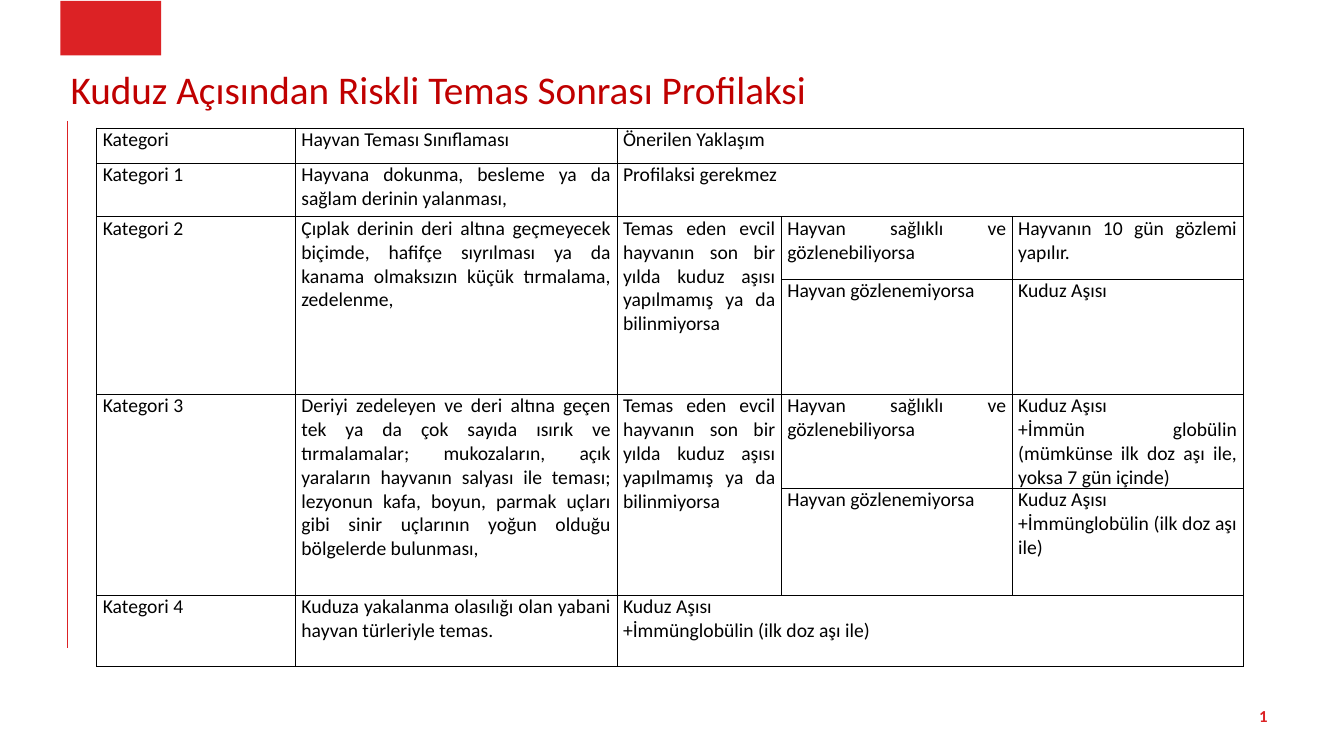
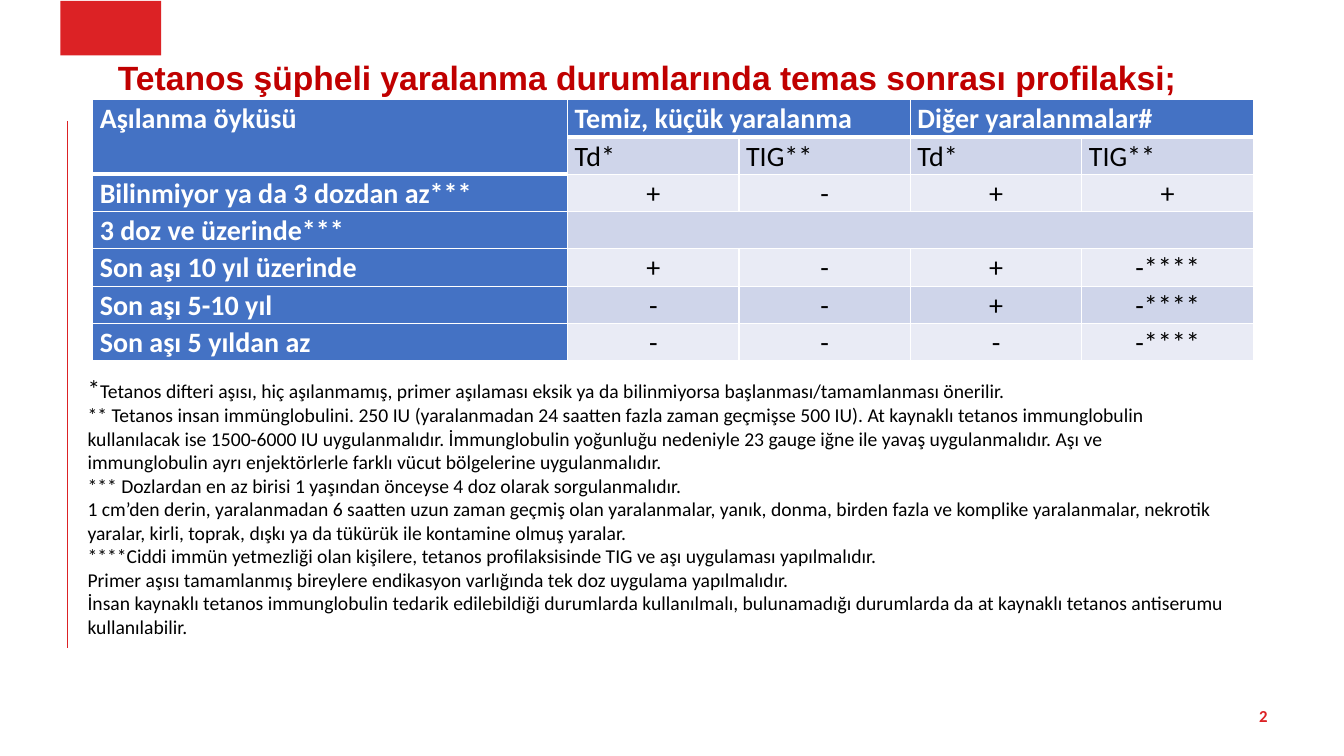
from lxml.etree import SubElement
from pptx import Presentation
from pptx.dml.color import RGBColor
from pptx.enum.shapes import MSO_CONNECTOR, MSO_SHAPE
from pptx.enum.text import MSO_ANCHOR, MSO_AUTO_SIZE, PP_ALIGN
from pptx.oxml.ns import qn
from pptx.util import Inches, Pt

RED, DEEP, BLACK, WHITE = "DC2225", "C00000", "000000", "FFFFFF"
BLUE, DARK, PALE = "4472C4", "CFD5EA", "E9EBF5"
BASE = {"name": "Calibri", "size": Pt(14), "bold": False}

PET = "Temas eden evcil hayvanın son bir yılda kuduz aşısı yapılmamış ya da bilinmiyorsa"
SEEN = "Hayvan sağlıklı ve gözlenebiliyorsa"
LOST = "Hayvan gözlenemiyorsa"
SHOT = "Kuduz Aşısı"
BOTH = SHOT + "\n+İmmünglobülin (ilk doz aşı ile)"

RABIES = [
    ["Kategori", "Hayvan Teması Sınıflaması", "Önerilen Yaklaşım", "", ""],
    ["Kategori 1", "Hayvana dokunma, besleme ya da sağlam derinin yalanması,",
     "Profilaksi gerekmez", "", ""],
    ["Kategori 2",
     "Çıplak derinin deri altına geçmeyecek biçimde, hafifçe sıyrılması ya da "
     "kanama olmaksızın küçük tırmalama, zedelenme,",
     PET, SEEN, "Hayvanın 10 gün gözlemi yapılır."],
    ["", "", "", LOST, SHOT],
    ["Kategori 3",
     "Deriyi zedeleyen ve deri altına geçen tek ya da çok sayıda ısırık ve tırmalamalar; "
     "mukozaların, açık yaraların hayvanın salyası ile teması; lezyonun kafa, boyun, "
     "parmak uçları gibi sinir uçlarının yoğun olduğu bölgelerde bulunması,",
     PET, SEEN,
     SHOT + "\n+İmmün globülin (mümkünse ilk doz aşı ile, yoksa 7 gün içinde)"],
    ["", "", "", LOST, BOTH],
    ["Kategori 4", "Kuduza yakalanma olasılığı olan yabani hayvan türleriyle temas.",
     BOTH, "", ""],
]
TETANUS = [
    ["Aşılanma öyküsü", "Temiz, küçük yaralanma", "", "Diğer yaralanmalar#", ""],
    ["", "Td*", "TIG**", "Td*", "TIG**"],
    ["Bilinmiyor ya da 3 dozdan az***", "+", "-", "+", "+"],
    ["3 doz ve üzerinde***", "", "", "", ""],
    ["Son aşı 10 yıl üzerinde", "+", "-", "+", "-****"],
    ["Son aşı 5-10 yıl", "-", "-", "+", "-****"],
    ["Son aşı 5 yıldan az", "-", "-", "-", "-****"],
]
STAR = ("Tetanos difteri aşısı, hiç aşılanmamış, primer aşılaması eksik ya da "
        "bilinmiyorsa başlanması/tamamlanması önerilir.")
NOTES = [
    "** Tetanos insan immünglobulini. 250 IU (yaralanmadan 24 saatten fazla zaman geçmişse "
    "500 IU). At kaynaklı tetanos immunglobulin kullanılacak ise 1500-6000 IU uygulanmalıdır. "
    "İmmunglobulin yoğunluğu nedeniyle 23 gauge iğne ile yavaş uygulanmalıdır. Aşı ve "
    "immunglobulin ayrı enjektörlerle farklı vücut bölgelerine uygulanmalıdır.",
    "*** Dozlardan en az birisi 1 yaşından önceyse 4 doz olarak sorgulanmalıdır.",
    "1 cm’den derin, yaralanmadan 6 saatten uzun zaman geçmiş olan yaralanmalar, yanık, donma, "
    "birden fazla ve komplike yaralanmalar, nekrotik yaralar, kirli, toprak, dışkı ya da tükürük "
    "ile kontamine olmuş yaralar.",
    "****Ciddi immün yetmezliği olan kişilere, tetanos profilaksisinde TIG ve aşı uygulaması "
    "yapılmalıdır.",
    "Primer aşısı tamamlanmış bireylere endikasyon varlığında tek doz uygulama yapılmalıdır.",
    "İnsan kaynaklı tetanos immunglobulin tedarik edilebildiği durumlarda kullanılmalı, "
    "bulunamadığı durumlarda da at kaynaklı tetanos antiserumu kullanılabilir.",
]


def tint(form, color):
    """Give a fill, line or font colour format a hex colour."""
    form.rgb = RGBColor.from_string(color)


def put(item, values):
    """Set attributes from a dict of format values."""
    for key, value in values.items():
        setattr(item, key, value)


def say(para, text, color=BLACK, **look):
    """Add a formatted run to a paragraph."""
    run = para.add_run()
    run.text = text
    put(run.font, BASE | look)
    tint(run.font.color, color)
    return run


def place(shape, *box):
    """Move and size a shape, in inches."""
    put(shape, dict(zip(("left", "top", "width", "height"), map(Inches, box))))


def frame(slide, page):
    """Draw the red tab, the side line and the page number."""
    tab = slide.shapes.add_shape(MSO_SHAPE.RECTANGLE, *map(Inches, (0.6, 0.01, 1, 0.54)))
    tab.shadow.inherit = False
    tab.fill.solid()
    tint(tab.fill.fore_color, RED)
    tab.line.fill.background()
    side = slide.shapes.add_connector(
        MSO_CONNECTOR.STRAIGHT, *map(Inches, (0.67, 1.2, 0.67, 6.43)))
    tint(side.line.color, RED)
    side.line.width = Pt(1)
    SubElement(side._element.spPr, qn("a:effectLst"))
    text = slide.shapes.add_textbox(*map(Inches, (12.33, 6.7, 0.4, 0.8))).text_frame
    put(text, {"word_wrap": True, "vertical_anchor": MSO_ANCHOR.MIDDLE})
    para = text.paragraphs[0]
    para.alignment = PP_ALIGN.CENTER
    field = say(para, str(page), RED, size=Pt(12), bold=True)._r
    field.tag = qn("a:fld")
    field.set("id", "{B6F15528-21DE-4FAA-801E-634DDDAF4B2B}")
    field.set("type", "slidenum")


def start(deck, page, title, box, **look):
    """Add a slide with its frame and title."""
    slide = deck.slides.add_slide(deck.slide_layouts[5])
    frame(slide, page)
    head = slide.shapes.title
    place(head, *box)
    put(head.text_frame, {"word_wrap": True, "auto_size": MSO_AUTO_SIZE.NONE,
                          "vertical_anchor": MSO_ANCHOR.MIDDLE})
    para = head.text_frame.paragraphs[0]
    put(para, {"alignment": PP_ALIGN.LEFT, "line_spacing": 0.9})
    say(para, title, DEEP, **look)
    return slide


def edge(cell, color, **sides):
    """Draw the borders of a cell, with widths in points."""
    for side in "LRTB":
        line = SubElement(cell._tc.get_or_add_tcPr(), qn("a:ln" + side),
                          w=str(Pt(sides.get(side, sides["every"]))))
        fill = SubElement(line, qn("a:solidFill"))
        SubElement(fill, qn("a:srgbClr"), val=color)


def grid(slide, data, spot, cols, rows, spans, pad, dress):
    """Add a table; dress formats a cell and gives its text styles."""
    size = map(Inches, (*spot, sum(cols), sum(rows)))
    table = slide.shapes.add_table(len(rows), len(cols), *size).table
    for col, width in zip(table.columns, cols):
        col.width = Inches(width)
    for row, height in zip(table.rows, rows):
        row.height = Inches(height)
    for top, left, low, right in spans:
        table.cell(top, left).merge(table.cell(low, right))
    for r, line in enumerate(data):
        for c, text in enumerate(line):
            cell = table.cell(r, c)
            put(cell, {"margin_left": Inches(pad), "margin_right": Inches(pad),
                       "margin_top": 0, "margin_bottom": 0})
            form, look = dress(cell, r, c)
            for n, part in enumerate(text.split("\n") if text else []):
                words = cell.text_frame
                para = words.add_paragraph() if n else words.paragraphs[0]
                put(para, form)
                say(para, part, **look)


def plain(cell, row, col):
    """Dress a cell of the rabies table."""
    edge(cell, BLACK, every=0.75)
    cell.fill.background()
    return {"alignment": PP_ALIGN.JUSTIFY}, {}


def band(cell, row, col):
    """Dress a cell of the tetanus table."""
    last = 0 if col else 1
    edge(cell, WHITE, every=1, B=3 if row <= last else 1, T=3 if row == last + 1 else 1)
    head = row == 0 or col == 0
    cell.fill.solid()
    tint(cell.fill.fore_color, BLUE if head else DARK if row % 2 else PALE)
    side = PP_ALIGN.CENTER if col and row > 1 else PP_ALIGN.LEFT
    look = {"color": WHITE if head else BLACK, "size": Pt(20), "bold": head}
    return {"alignment": side, "line_spacing": 1.07}, look


def notes(slide):
    """Add the notes below the tetanus table."""
    text = slide.shapes.add_textbox(*map(Inches, (0.77, 3.65, 11.5, 3.37))).text_frame
    text.word_wrap = True
    say(text.paragraphs[0], "*", size=Pt(18))
    say(text.paragraphs[0], STAR)
    for line in NOTES:
        say(text.add_paragraph(), line)


def main():
    """Build and save the deck."""
    deck = Presentation()
    put(deck, {"slide_width": Inches(13.33), "slide_height": Inches(7.5)})
    slide = start(deck, 16, "Kuduz Açısından Riskli Temas Sonrası Profilaksi",
                  (0.6, 0.64, 12.13, 0.55), size=Pt(28))
    spans = [(r, 2, r, 4) for r in (0, 1, 6)]
    spans += [(r, c, r + 1, c) for r in (2, 4) for c in range(3)]
    grid(slide, RABIES, (0.96, 1.27), [1.97, 3.19, 1.63, 2.29, 2.29],
         [0.35, 0.53, 0.62, 1.14, 0.89, 1.06, 0.71], spans, 0.06, plain)
    slide = start(deck, 17, "Tetanos şüpheli yaralanma durumlarında temas sonrası profilaksi;",
                  (1.07, 0.58, 11.5, 0.41), name="Arial", size=Pt(24), bold=True)
    spans = [(0, 0, 1, 0), (0, 1, 0, 2), (0, 3, 0, 4), (3, 1, 3, 4)]
    grid(slide, TETANUS, (0.92, 0.99), [4.71] + [1.7] * 4, [0.37] * 7, spans, 0.07, band)
    notes(slide)
    deck.save("out.pptx")


if __name__ == "__main__":
    main()
